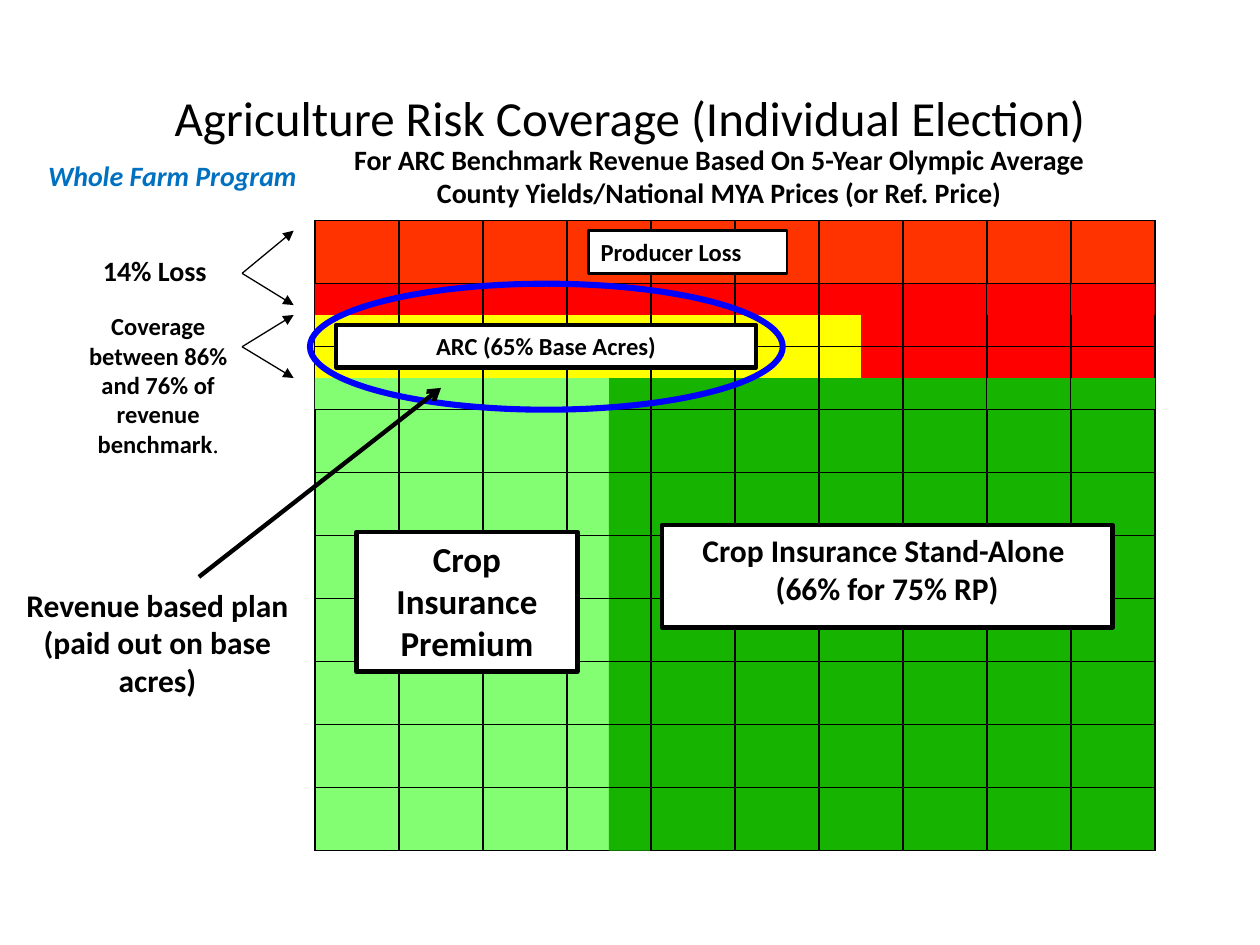
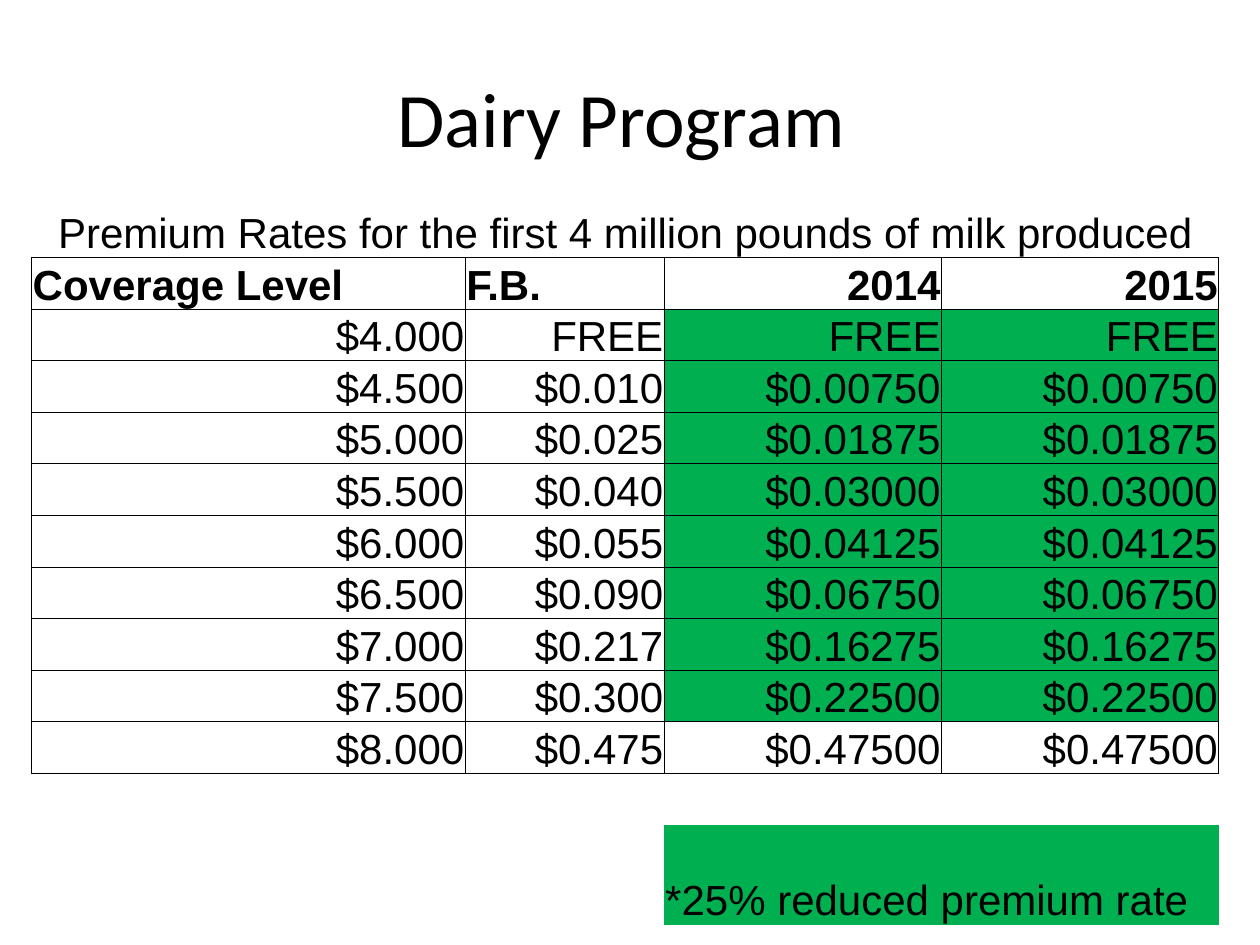
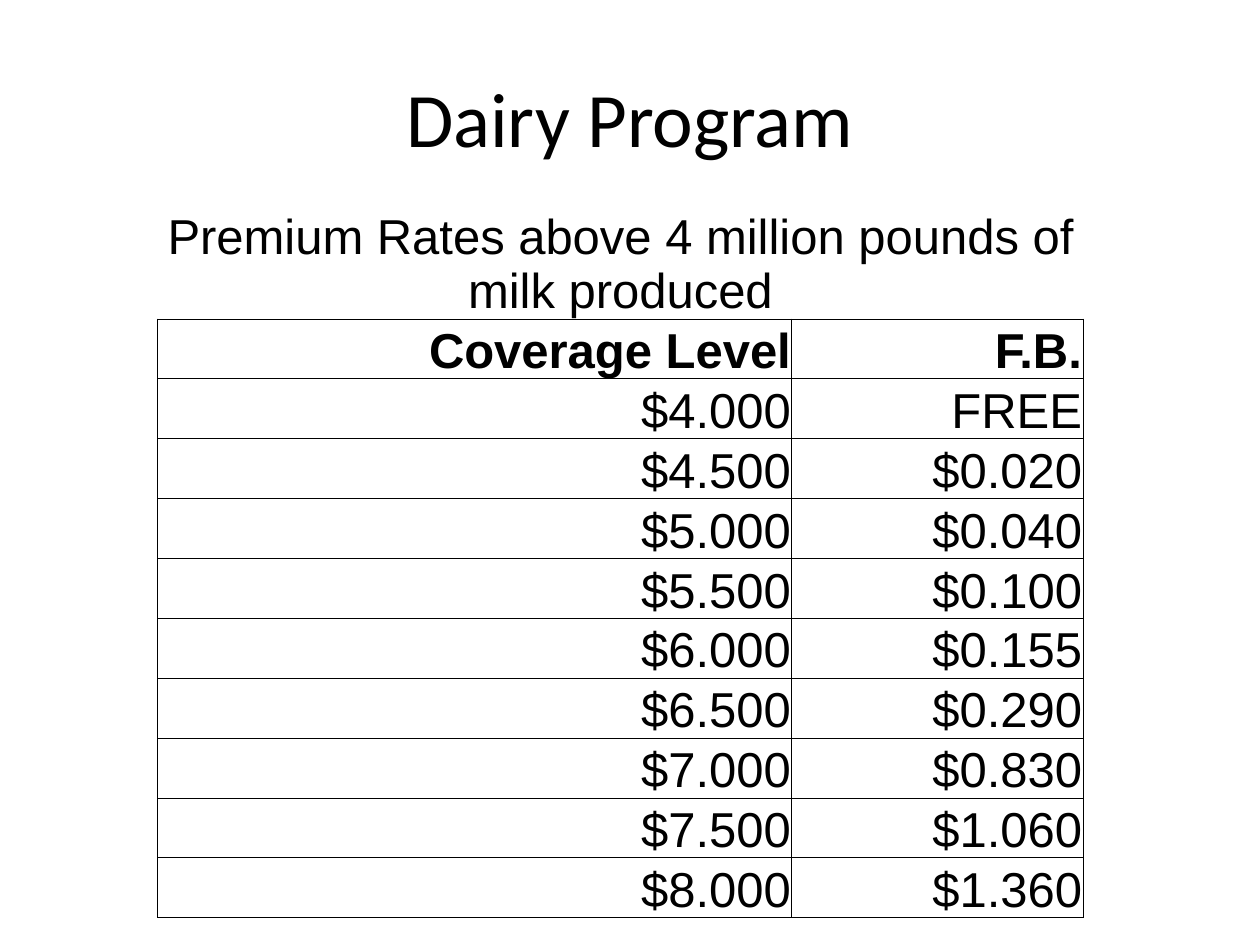
from dataclasses import dataclass

from lxml.etree import SubElement
from pptx import Presentation
from pptx.dml.color import RGBColor
from pptx.enum.shapes import MSO_CONNECTOR, MSO_SHAPE
from pptx.enum.text import MSO_ANCHOR, PP_ALIGN
from pptx.oxml import parse_xml
from pptx.oxml.ns import nsdecls, qn
from pptx.util import Cm, Pt


@dataclass(frozen=True)
class Theme:
    black: str = "000000"
    white: str = "FFFFFF"
    loss: str = "FF3300"
    red: str = "FF0000"
    yellow: str = "FFFF00"
    light_green: str = "83FE72"
    dark_green: str = "16B301"
    reduced: str = "00B050"
    blue: str = "0070C0"
    ring: str = "0000FF"
    font: str = "Calibri"
    table_font: str = "Arial"
    title: int = 44
    long_title: int = 28
    large: int = 20
    medium: int = 18
    body: int = 16
    small: int = 14


T = Theme()
LEFT, CENTER, RIGHT = PP_ALIGN.LEFT, PP_ALIGN.CENTER, PP_ALIGN.RIGHT

ARC_TITLE = "Agriculture Risk Coverage (Individual Election)"
TITLE_BOX = (1.27, 0.76, 22.86, 3.18)
GRID_X, GRID_Y, GRID_W, GRID_H, GRID_N = 6.35, 4.45, 16.93, 12.7, 10

GRID_ROWS = [
    (T.loss, T.loss, 0),
    (T.yellow, T.red, 6),
    (T.red, T.red, 0),
] + [(T.light_green, T.dark_green, 4)] * 7

BLOCKS = [
    (0, 1, 10, 1.5, T.red),
    (3.5, 3, 4, 10, T.dark_green),
    (0, 1.5, 6.5, 2.5, T.yellow),
    (3.5, 2.5, 10, 3, T.dark_green),
    (0, 2.5, 3.5, 3, T.light_green),
]

LABELS = [
    ("Producer Loss", (11.86, 4.65, 4.01, 0.86), 1.5, T.small, LEFT),
    ("Crop Insurance Stand-Alone \n(66% for 75% RP)", (13.34, 10.59, 9.09, 2.06),
     2.5, T.medium, CENTER),
    ("Crop Insurance Premium", (7.19, 10.72, 4.45, 2.82), 2.5, T.large, CENTER),
    ("ARC (65% Base Acres)", (6.78, 6.55, 8.46, 0.86), 2.5, T.small, CENTER),
]
RING_BOX = (6.25, 5.72, 9.53, 2.54)

NOTES = [
    ("For ARC Benchmark Revenue Based On 5-Year Olympic Average "
     "County Yields/National MYA Prices (or Ref. Price)",
     (6.78, 2.74, 15.44, 1.24), dict(size=T.body, after=10)),
    ("14% Loss ", (1.7, 4.98, 2.97, 0.74), dict(size=T.body, after=10)),
    ("Coverage between 86% and 76% of revenue benchmark",
     (1.27, 6.15, 3.84, 2.54), dict(size=T.small, after=10, end=".")),
    ("Revenue based plan (paid out on base acres)",
     (0, 11.68, 6.35, 2.57), dict(size=T.medium)),
    ("Whole Farm Program", (0.2, 3.07, 6.55, 0.94),
     dict(size=T.body, color=T.blue, italic=True)),
]

ARROWS = [
    (4.88, 5.51, 5.92, 4.65, 0.75, "triangle"),
    (4.88, 5.51, 5.92, 6.15, 0.75, "triangle"),
    (4.88, 6.99, 5.92, 6.35, 0.75, "triangle"),
    (4.88, 6.99, 5.92, 7.62, 0.75, "triangle"),
    (4.01, 11.63, 8.89, 7.82, 2.5, "arrow"),
]

LEVELS = ["$4.000", "$4.500", "$5.000", "$5.500", "$6.000", "$6.500",
          "$7.000", "$7.500", "$8.000"]
FIRST_RATES = ["FREE", "$0.010", "$0.025", "$0.040", "$0.055", "$0.090",
               "$0.217", "$0.300", "$0.475"]
REDUCED_RATES = ["FREE", "$0.00750", "$0.01875", "$0.03000", "$0.04125",
                 "$0.06750", "$0.16275", "$0.22500", "$0.47500"]
ABOVE_RATES = ["FREE", "$0.020", "$0.040", "$0.100", "$0.155", "$0.290",
               "$0.830", "$1.060", "$1.360"]

FIRST_TABLE = dict(
    title="Premium Rates for the first 4 million pounds of milk produced",
    rows=[("Coverage Level", "F.B.", "2014", "2015")]
    + list(zip(LEVELS, FIRST_RATES, REDUCED_RATES, REDUCED_RATES)),
    corner=(0.64, 3.18), widths=[8.74, 4.01, 5.59, 5.59],
    heights=[2.01] + [1.04] * 11 + [2.01], size=24,
    head_align=[LEFT, LEFT, RIGHT, RIGHT])
REDUCED_NOTE = "*25% reduced premium rate"
ABOVE_TABLE = dict(
    title="Premium Rates above 4 million pounds of milk produced",
    rows=[("Coverage Level", "F.B.")] + list(zip(LEVELS, ABOVE_RATES)),
    corner=(3.18, 3.38), widths=[12.78, 5.87],
    heights=[3.05] + [1.13] * 10, size=28, head_align=[RIGHT, RIGHT])


def rgb(color):
    return RGBColor.from_string(color)


def write(tf, text, size=18, font=T.font, color=T.black, bold=False,
          italic=False, align=CENTER, after=0, end=""):
    tf.word_wrap = True
    for i, line in enumerate(text.split("\n")):
        p = tf.add_paragraph() if i else tf.paragraphs[0]
        p.alignment = align
        p.space_after = Pt(after)
        runs = [(line, font, bold)]
        if end:
            runs.append((end, "Times New Roman", False))
        for words, name, heavy in runs:
            r = p.add_run()
            r.text = words
            r.font.name, r.font.size = name, Pt(size)
            r.font.bold, r.font.italic = heavy, italic
            r.font.color.rgb = rgb(color)


def add_text(s, text, box, anchor=MSO_ANCHOR.TOP, **fmt):
    tf = s.shapes.add_textbox(*map(Cm, box)).text_frame
    tf.vertical_anchor = anchor
    write(tf, text, **fmt)


def add_box(s, box, fill=None, line=None, weight=1, kind=MSO_SHAPE.RECTANGLE):
    sp = s.shapes.add_shape(kind, *map(Cm, box))
    sp.shadow.inherit = False
    if fill:
        sp.fill.solid()
        sp.fill.fore_color.rgb = rgb(fill)
    else:
        sp.fill.background()
    if line:
        sp.line.color.rgb = rgb(line)
        sp.line.width = Pt(weight)
    else:
        sp.line.fill.background()
    sp.text_frame.vertical_anchor = MSO_ANCHOR.TOP
    return sp


def add_line(s, x1, y1, x2, y2, weight=0.75, tail=None):
    cx = s.shapes.add_connector(MSO_CONNECTOR.STRAIGHT, *map(Cm, (x1, y1, x2, y2)))
    cx.line.color.rgb = rgb(T.black)
    cx.line.width = Pt(weight)
    spPr = cx._element.spPr
    if tail:
        SubElement(spPr.find(qn("a:ln")), qn("a:tailEnd"), type=tail)
    SubElement(spPr, qn("a:effectLst"))


def add_table(s, corner, widths, heights):
    box = (*corner, sum(widths), sum(heights))
    tbl = s.shapes.add_table(len(heights), len(widths), *map(Cm, box)).table
    tbl.first_row = tbl.horz_banding = False
    for col, w in zip(tbl.columns, widths):
        col.width = Cm(w)
    for row, h in zip(tbl.rows, heights):
        row.height = Cm(h)
    return tbl


def style_cell(cell, fill=None, sides="LRTB", weight=0.5):
    if fill:
        cell.fill.solid()
        cell.fill.fore_color.rgb = rgb(fill)
    else:
        cell.fill.background()
    tcPr = cell._tc.get_or_add_tcPr()
    for i, side in enumerate("LRTB"):
        paint = (f'<a:solidFill><a:srgbClr val="{T.black}"/></a:solidFill>'
                 if side in sides else "<a:noFill/>")
        tcPr.insert(i, parse_xml(
            f'<a:ln{side} {nsdecls("a")} w="{Pt(weight)}">{paint}</a:ln{side}>'))


def write_cell(cell, text, **fmt):
    cell.vertical_anchor = MSO_ANCHOR.BOTTOM
    cell.margin_left = cell.margin_right = cell.margin_top = Cm(0.02)
    cell.margin_bottom = 0
    write(cell.text_frame, text, font=T.table_font, **fmt)


def rates_table(s, title, rows, corner, widths, heights, size, head_align):
    tbl = add_table(s, corner, widths, heights)
    last = len(widths) - 1
    for c in range(last + 1):
        style_cell(tbl.cell(0, c), sides="B")
    tbl.cell(0, 0).merge(tbl.cell(0, last))
    write_cell(tbl.cell(0, 0), title, size=size)
    for i, row in enumerate(rows, 1):
        for c, value in enumerate(row):
            is_reduced = c > 1 and 1 < i < len(rows)
            style_cell(tbl.cell(i, c), T.reduced if is_reduced else None)
            write_cell(tbl.cell(i, c), value, size=size, bold=i == 1,
                       align=head_align[c] if i == 1 else RIGHT)
    return tbl


def new_slide(prs, title, size=T.title):
    s = prs.slides.add_slide(prs.slide_layouts[6])
    add_text(s, title, TITLE_BOX, anchor=MSO_ANCHOR.MIDDLE, size=size)
    return s


def grid_x(col):
    return GRID_X + GRID_W * col / GRID_N


def grid_y(row):
    return GRID_Y + GRID_H * row / GRID_N


def grid_line(s, c1, r1, c2, r2, weight=0.75):
    add_line(s, grid_x(c1), grid_y(r1), grid_x(c2), grid_y(r2), weight)


def coverage_slide(prs):
    s = new_slide(prs, ARC_TITLE, T.long_title)
    tbl = add_table(s, (GRID_X, GRID_Y), [GRID_W / GRID_N] * GRID_N,
                    [GRID_H / GRID_N] * GRID_N)
    for r, (left, right, split) in enumerate(GRID_ROWS):
        for c in range(GRID_N):
            style_cell(tbl.cell(r, c), left if c < split else right, weight=1)
    for c1, r1, c2, r2, fill in BLOCKS:
        x, y = grid_x(c1), grid_y(r1)
        add_box(s, (x, y, grid_x(c2) - x, grid_y(r2) - y), fill)
    for row in (1, 2, 3):
        grid_line(s, 0, row, GRID_N, row)
    for row in range(4, GRID_N):
        grid_line(s, 3.5, row, 4, row)
    for col in range(1, GRID_N):
        grid_line(s, col, 1, col, 3)
    grid_line(s, 4, 2.5, 4, GRID_N, 1)
    for text, box, weight, size, align in LABELS:
        sp = add_box(s, box, T.white, T.black, weight)
        write(sp.text_frame, text, size=size, bold=True, align=align)
    add_box(s, RING_BOX, line=T.ring, weight=3.5, kind=MSO_SHAPE.OVAL)
    for arrow in ARROWS:
        add_line(s, *arrow)
    for text, box, fmt in NOTES:
        add_text(s, text, box, bold=True, **fmt)


def first_pounds_slide(prs):
    s = new_slide(prs, "Dairy Program ")
    tbl = rates_table(s, **FIRST_TABLE)
    for c in range(4):
        style_cell(tbl.cell(11, c), sides="T")
        style_cell(tbl.cell(12, c), T.reduced if c > 1 else None, sides="")
    tbl.cell(12, 2).merge(tbl.cell(12, 3))
    write_cell(tbl.cell(12, 2), REDUCED_NOTE, size=FIRST_TABLE["size"], align=LEFT)


def above_pounds_slide(prs):
    rates_table(new_slide(prs, "Dairy Program"), **ABOVE_TABLE)


def main():
    prs = Presentation()
    prs.slide_width, prs.slide_height = Cm(25.4), Cm(19.05)
    coverage_slide(prs)
    first_pounds_slide(prs)
    above_pounds_slide(prs)
    prs.save("out.pptx")


if __name__ == "__main__":
    main()
